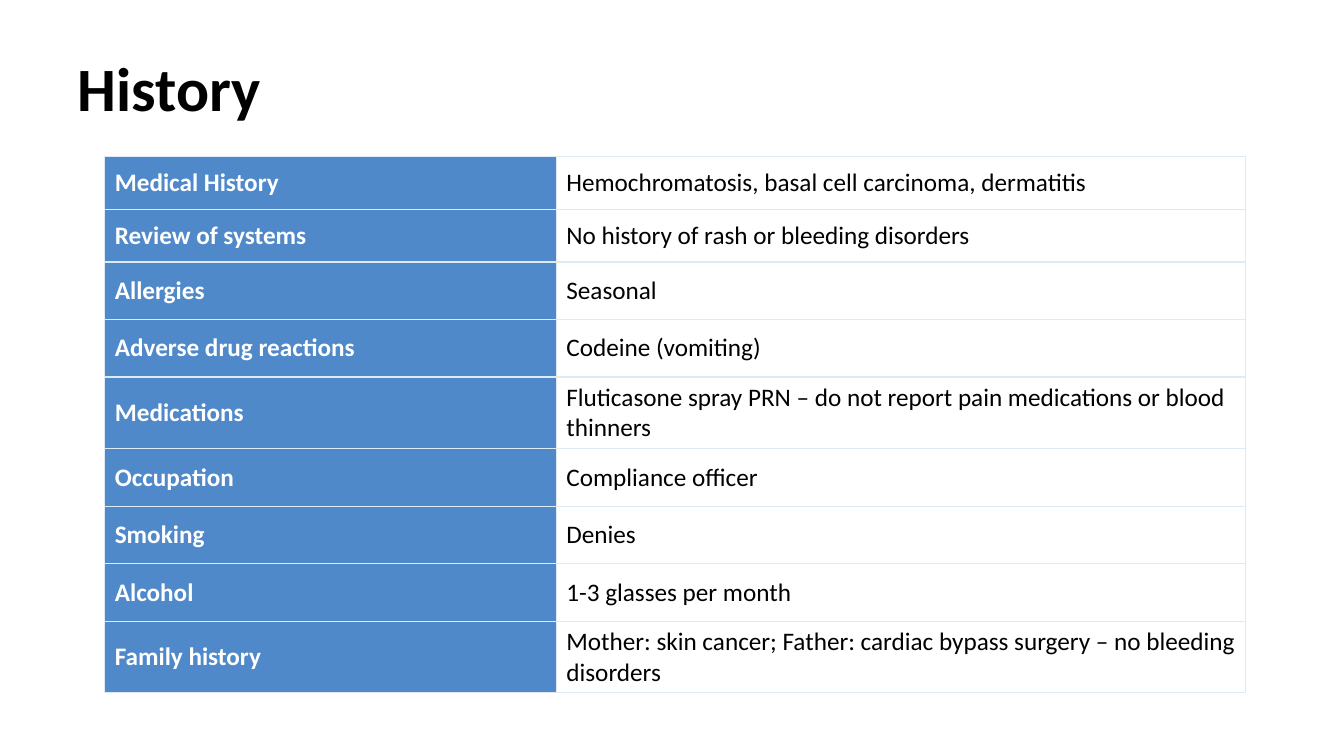
from dataclasses import dataclass

from lxml import etree
from pptx import Presentation
from pptx.dml.color import RGBColor
from pptx.enum.text import MSO_ANCHOR, PP_ALIGN
from pptx.oxml.ns import qn
from pptx.util import Cm, Pt

MIDDLE, BOTTOM = MSO_ANCHOR.MIDDLE, MSO_ANCHOR.BOTTOM
LEFT = PP_ALIGN.LEFT
TITLE_ONLY = 5


@dataclass(frozen=True)
class Theme:
    font: str = "Calibri"
    title_size: int = 44
    cell_size: int = 18
    text: str = "000000"
    label_text: str = "FFFFFF"
    label_fill: str = "4F89C9"
    value_fill: str = "FFFFFF"
    border: str = "DEEBF7"
    border_width: int = 1


class SlideBuilder:
    def __init__(self, prs, theme):
        self.theme = theme
        self.slide = prs.slides.add_slide(prs.slide_layouts[TITLE_ONLY])

    def format_text(self, tf, size, color, bold):
        for p in tf.paragraphs:
            p.alignment = LEFT
            for r in p.runs:
                r.font.name = self.theme.font
                r.font.size = Pt(size)
                r.font.bold = bold
                r.font.color.rgb = RGBColor.from_string(color)

    def title(self, text, left, top, width, height):
        sp = self.slide.shapes.title
        sp.left, sp.top, sp.width, sp.height = left, top, width, height
        tf = sp.text_frame
        tf.text = text
        tf.word_wrap = True
        tf.vertical_anchor = BOTTOM
        tf.paragraphs[0].line_spacing = 0.9
        self.format_text(tf, self.theme.title_size, self.theme.text, True)

    def borders(self, cell):
        tc_pr = cell._tc.get_or_add_tcPr()
        for side in ("lnL", "lnR", "lnT", "lnB"):
            ln = etree.SubElement(tc_pr, qn(f"a:{side}"), w=str(Pt(self.theme.border_width)))
            fill = etree.SubElement(ln, qn("a:solidFill"))
            etree.SubElement(fill, qn("a:srgbClr"), val=self.theme.border)

    def cell(self, cell, text, is_label):
        t = self.theme
        cell.text = text
        cell.vertical_anchor = MIDDLE
        self.borders(cell)
        cell.fill.solid()
        cell.fill.fore_color.rgb = RGBColor.from_string(t.label_fill if is_label else t.value_fill)
        self.format_text(cell.text_frame, t.cell_size, t.label_text if is_label else t.text, is_label)

    def table(self, rows, left, top, col_widths, row_heights):
        table = self.slide.shapes.add_table(
            len(rows), len(col_widths), left, top, sum(col_widths), sum(row_heights)).table
        table.first_row = table.horz_banding = False
        table.first_col = True
        for column, width in zip(table.columns, col_widths):
            column.width = width
        for i, (row, height) in enumerate(zip(rows, row_heights)):
            table.rows[i].height = height
            for j, text in enumerate(row):
                self.cell(table.cell(i, j), text, is_label=j == 0)


HISTORY = [
    ("Medical History", "Hemochromatosis, basal cell carcinoma, dermatitis"),
    ("Review of systems", "No history of rash or bleeding disorders"),
    ("Allergies", "Seasonal"),
    ("Adverse drug reactions", "Codeine (vomiting)"),
    ("Medications", "Fluticasone spray PRN – do not report pain medications or blood thinners"),
    ("Occupation", "Compliance officer"),
    ("Smoking", "Denies"),
    ("Alcohol", "1-3 glasses per month"),
    ("Family history", "Mother: skin cancer; Father: cardiac bypass surgery – no bleeding disorders"),
]


def main():
    prs = Presentation()
    prs.slide_width, prs.slide_height = Cm(33.87), Cm(19.05)
    s = SlideBuilder(prs, Theme())

    # Title
    s.title("History", Cm(1.7), Cm(0), Cm(15.24), Cm(3.28))

    # Patient history: the first two rows are slightly lower than the rest
    row_heights = [Cm(1.33)] * 2 + [Cm(1.45)] * (len(HISTORY) - 2)
    s.table(HISTORY, Cm(2.64), Cm(3.94), [Cm(11.38), Cm(17.37)], row_heights)

    prs.save("out.pptx")


if __name__ == "__main__":
    main()
